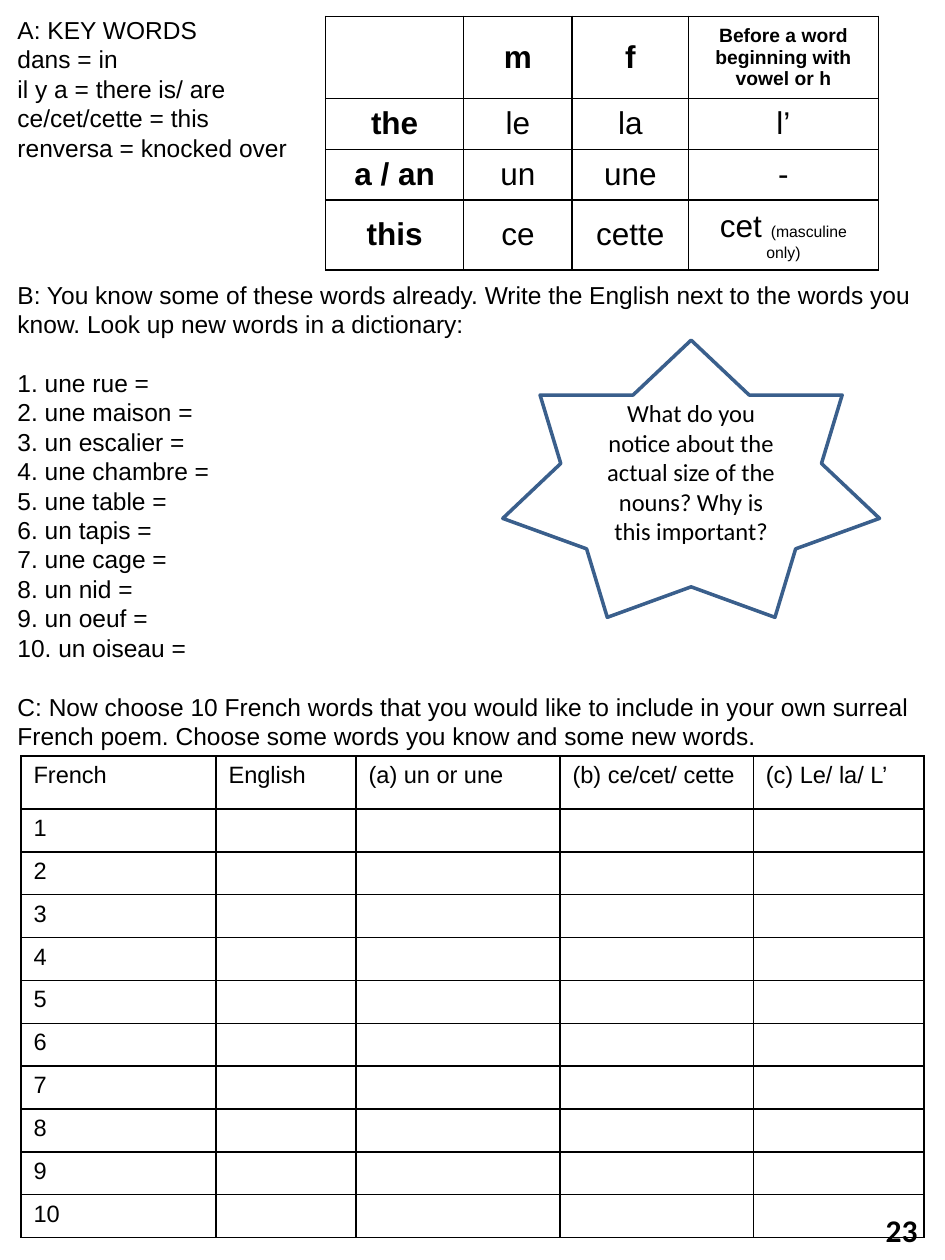
from dataclasses import dataclass

from lxml.etree import SubElement
from pptx import Presentation
from pptx.dml.color import RGBColor
from pptx.enum.shapes import MSO_SHAPE
from pptx.enum.text import MSO_ANCHOR, PP_ALIGN
from pptx.oxml.ns import qn
from pptx.util import Pt

BLACK = "000000"
LINE = 16.82  # line pitch of the worksheet text


@dataclass
class Box:
    left: float
    top: float
    width: float
    height: float

    def size(self) -> list:
        return [Pt(v) for v in (self.left, self.top, self.width, self.height)]


@dataclass
class Grid:
    box: Box
    cols: list
    rows: list
    cells: list


@dataclass
class Block:
    lines: list
    gap: int = 0  # free lines above the block


def paint(color, code: str) -> None:
    color.rgb = RGBColor.from_string(code)


def write(para, text: str, *, font="Arial", size=14.0, bold=False,
          align=PP_ALIGN.LEFT, color=BLACK) -> None:
    """Add one formatted run, or size the empty paragraph."""
    para.alignment = align
    if not text:
        SubElement(para._p, qn("a:endParaRPr"), sz=str(int(size * 100)))
        return
    run = para.add_run()
    run.text = text
    run.font.name, run.font.size, run.font.bold = font, Pt(size), bold
    paint(run.font.color, color)


def edge(cell) -> None:
    """Draw a thin black line on all four sides of a cell."""
    props = cell._tc.get_or_add_tcPr()
    for n, side in enumerate(("lnL", "lnR", "lnT", "lnB")):
        line = props.makeelement(qn(f"a:{side}"), {"w": str(Pt(1))})
        fill = SubElement(line, qn("a:solidFill"))
        SubElement(fill, qn("a:srgbClr"), val=BLACK)
        props.insert(n, line)


def add_grid(slide, grid: Grid):
    """Add a plain ruled table; the caller fills in the text."""
    table = slide.shapes.add_table(
        len(grid.rows), len(grid.cols), *grid.box.size()).table
    table.first_row = table.horz_banding = False
    for col, width in zip(table.columns, grid.cols):
        col.width = Pt(width)
    for row, height in zip(table.rows, grid.rows):
        row.height = Pt(height)
    for cell in table.iter_cells():
        cell.fill.background()
        edge(cell)
    return table


def add_form(slide, kind, box: Box, text: str, **style):
    """Add an unfilled shape with centred text."""
    form = slide.shapes.add_shape(kind, *box.size())
    form.shadow.inherit = False
    form.fill.background()
    form.line.fill.background()
    frame = form.text_frame
    frame.word_wrap = True
    frame.vertical_anchor = MSO_ANCHOR.MIDDLE
    write(frame.paragraphs[0], text, font="Calibri",
          align=PP_ALIGN.CENTER, **style)
    return form


def add_text(slide, box: Box, blocks: list) -> None:
    """Add the worksheet text, with gaps made by paragraph spacing."""
    frame = slide.shapes.add_textbox(*box.size()).text_frame
    frame.word_wrap = True
    para = frame.paragraphs[0]
    for n, block in enumerate(blocks):
        for k, line in enumerate(block.lines):
            if n or k:
                para = frame.add_paragraph()
            para.line_spacing = Pt(LINE)
            para.space_before = Pt(0 if k else block.gap * LINE)
            write(para, line)


NOUNS = ["une rue", "une maison", "un escalier", "une chambre", "une table",
         "un tapis", "une cage", "un nid", "un oeuf", "un oiseau"]

BLOCKS = [
    Block(["A: KEY WORDS", "dans = in", "il y a = there is/ are",
           "ce/cet/cette = this", "renversa = knocked over"]),
    Block(["B: You know some of these words already. Write the English next "
           "to the words you know. Look up new words in a dictionary:"], 4),
    Block([f"{n}. {noun} =" for n, noun in enumerate(NOUNS, 1)], 1),
    Block(["C: Now choose 10 French words that you would like to include in "
           "your own surreal French poem. Choose some words you know and some "
           "new words."], 1),
]

POEM = Grid(
    Box(12, 432, 516, 275), [111.5, 80, 116.5, 110.5, 97.5],
    [30.3] + [24.5] * 10,
    [["French", "English", "(a) un or une", "(b) ce/cet/ cette",
      "(c) Le/ la/ L’"]] + [[str(n)] + [""] * 4 for n in range(1, 11)])

WORDS = Grid(
    Box(186, 9.3, 316, 145), [79, 62, 66.5, 108.5], [47, 29, 29, 40],
    [["", "m", "f", "Before a word beginning with vowel or h"],
     ["the", "le", "la", "l’"],
     ["a / an", "un", "une", "-"],
     ["this", "ce", "cette", "cet "]])


def main() -> None:
    deck = Presentation()
    deck.slide_width, deck.slide_height = Pt(540), Pt(720)
    slide = deck.slides.add_slide(deck.slide_layouts[6])

    # Instructions and word list
    add_text(slide, Box(2.9, 5, 525, 499), BLOCKS)

    # Blank table for the poem words
    table = add_grid(slide, POEM)
    for r, row in enumerate(POEM.cells):
        for c, text in enumerate(row):
            write(table.cell(r, c).text_frame.paragraphs[0], text, size=13.5)

    # Question star
    star = add_form(
        slide, MSO_SHAPE.STAR_7_POINT, Box(287.3, 194.4, 215.3, 158.4),
        "What do you notice about the actual size of the nouns? "
        "Why is this important?")
    paint(star.line.color, "3A5F8C")
    star.line.width = Pt(2)

    # Article table: bold headings on the top and left
    table = add_grid(slide, WORDS)
    for r, row in enumerate(WORDS.cells):
        for c, text in enumerate(row):
            cell = table.cell(r, c)
            cell.vertical_anchor = MSO_ANCHOR.MIDDLE
            write(cell.text_frame.paragraphs[0], text,
                  size=11 if (r, c) == (0, 3) else 18,
                  bold=r == 0 or c == 0, align=PP_ALIGN.CENTER)
    write(table.cell(3, 3).text_frame.paragraphs[0], "(masculine only)",
          size=9, align=PP_ALIGN.CENTER)

    # Page number
    add_form(slide, MSO_SHAPE.ROUNDED_RECTANGLE, Box(495.4, 686.2, 39.6, 33.8),
             "23", size=18, bold=True)

    deck.save("out.pptx")


if __name__ == "__main__":
    main()
